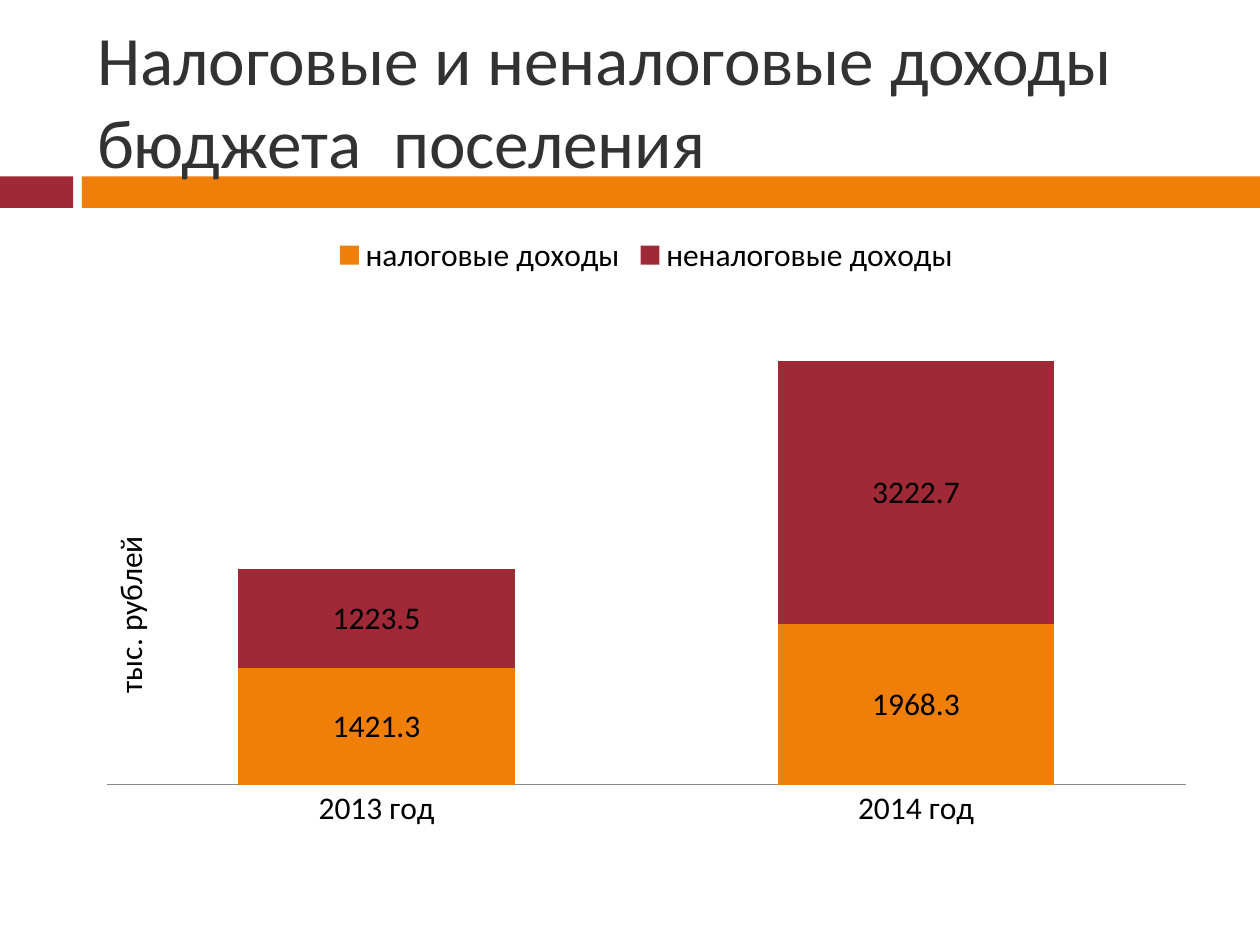
"""Build a slide with a stacked column chart of tax and non-tax revenue."""
from pptx import Presentation
from pptx.chart.data import CategoryChartData
from pptx.dml.color import RGBColor
from pptx.enum.chart import XL_CHART_TYPE as ChartType, XL_LABEL_POSITION as LabelPosition
from pptx.enum.chart import XL_LEGEND_POSITION as LegendPosition, XL_TICK_MARK as TickMark
from pptx.enum.shapes import MSO_SHAPE as Shape
from pptx.enum.text import MSO_ANCHOR as Anchor, MSO_AUTO_SIZE as AutoSize, PP_ALIGN as Align
from pptx.oxml import parse_xml
from pptx.oxml.ns import nsdecls
from pptx.util import Inches, Pt

FONT = "Calibri"
ORANGE, RED, DARK, BLACK, GRAY = "F07F09", "9F2936", "323232", "000000", "898989"
TITLE = "Налоговые и неналоговые доходы бюджета  поселения"
UNIT = "тыс. рублей"
CATEGORIES = ["2013 год", "2014 год"]
SERIES = [
    ("налоговые доходы", [1421.3, 1968.3], ORANGE),
    ("неналоговые доходы", [1223.5, 3222.7], RED),
]
BANDS = [(0, 0.58, RED), (0.65, 9.35, ORANGE)]
BAND_TOP, BAND_HEIGHT = 1.4, 0.25
LEFT, WIDTH = 0.67, 8.92
PLOT_LAYOUT = {"x": 0.02, "y": 0.12, "w": 0.96, "h": 0.79}


def rgb(value):
    return RGBColor.from_string(value)


def box(left, top, width, height):
    return [Inches(length) for length in (left, top, width, height)]


def style_font(font, size, color):
    font.name, font.size = FONT, Pt(size)
    font.color.rgb = rgb(color)


def add_bands(slide):
    for index, (left, width, color) in enumerate(BANDS):
        band = slide.shapes.add_shape(
            Shape.RECTANGLE, *box(left, BAND_TOP, width, BAND_HEIGHT))
        band.shadow.inherit = False
        band.fill.solid()
        band.fill.fore_color.rgb = rgb(color)
        band.line.fill.background()
        slide.shapes._spTree.insert(2 + index, band._element)


def write_text(shape, text, size, color, align):
    paragraph = shape.text_frame.paragraphs[0]
    paragraph.alignment = align
    run = paragraph.add_run()
    run.text = text
    style_font(run.font, size, color)


def set_plot_layout(chart):
    plot_area = chart._chartSpace.chart.plotArea
    for layout in plot_area.xpath("c:layout"):
        plot_area.remove(layout)
    modes = "".join(f'<c:{key}Mode val="edge"/>' for key in "xy")
    sizes = "".join(f'<c:{key} val="{value}"/>' for key, value in PLOT_LAYOUT.items())
    plot_area.insert(0, parse_xml(
        f'<c:layout {nsdecls("c")}><c:manualLayout><c:layoutTarget val="inner"/>'
        f"{modes}{sizes}</c:manualLayout></c:layout>"))


def add_revenue_chart(slide):
    data = CategoryChartData(number_format="0.0")
    data.categories = CATEGORIES
    for name, values, color in SERIES:
        data.add_series(name, values)
    chart = slide.shapes.add_chart(
        ChartType.COLUMN_STACKED, *box(LEFT, 1.75, WIDTH, 4.92), data).chart
    style_font(chart.font, 18, BLACK)
    chart.has_title = False
    chart.has_legend = True
    chart.legend.position = LegendPosition.TOP
    chart.legend.include_in_layout = False

    category_axis, value_axis = chart.category_axis, chart.value_axis
    category_axis.major_tick_mark = category_axis.minor_tick_mark = TickMark.NONE
    category_axis.format.line.color.rgb = rgb(GRAY)
    value_axis.minimum_scale, value_axis.maximum_scale = 0, 6000
    value_axis.has_major_gridlines = False
    value_axis.visible = False

    plot = chart.plots[0]
    plot.gap_width, plot.overlap = 95, 100
    plot.vary_by_categories = False
    for series, (name, values, color) in zip(plot.series, SERIES):
        series.format.fill.solid()
        series.format.fill.fore_color.rgb = rgb(color)
        labels = series.data_labels
        labels.show_value = True
        labels.number_format, labels.number_format_is_linked = "0.0", False
        labels.position = LabelPosition.CENTER
        style_font(labels.font, 18, BLACK)
    set_plot_layout(chart)


def main():
    presentation = Presentation()
    presentation.slide_width, presentation.slide_height = Inches(10), Inches(7.5)
    slide = presentation.slides.add_slide(presentation.slide_layouts[5])
    add_bands(slide)

    title = slide.shapes.title
    title.left, title.top, title.width, title.height = box(LEFT, 0.25, WIDTH, 1.08)
    title.text_frame.auto_size = AutoSize.NONE
    title.text_frame.vertical_anchor = Anchor.MIDDLE
    write_text(title, TITLE, 39.6, DARK, Align.LEFT)

    add_revenue_chart(slide)

    unit = slide.shapes.add_textbox(*box(0.3, 4.67, 1.46, 0.4))
    unit.rotation = 270
    unit.text_frame.word_wrap = False
    unit.text_frame.auto_size = AutoSize.SHAPE_TO_FIT_TEXT
    write_text(unit, UNIT, 18, BLACK, Align.LEFT)

    presentation.save("out.pptx")


if __name__ == "__main__":
    main()
